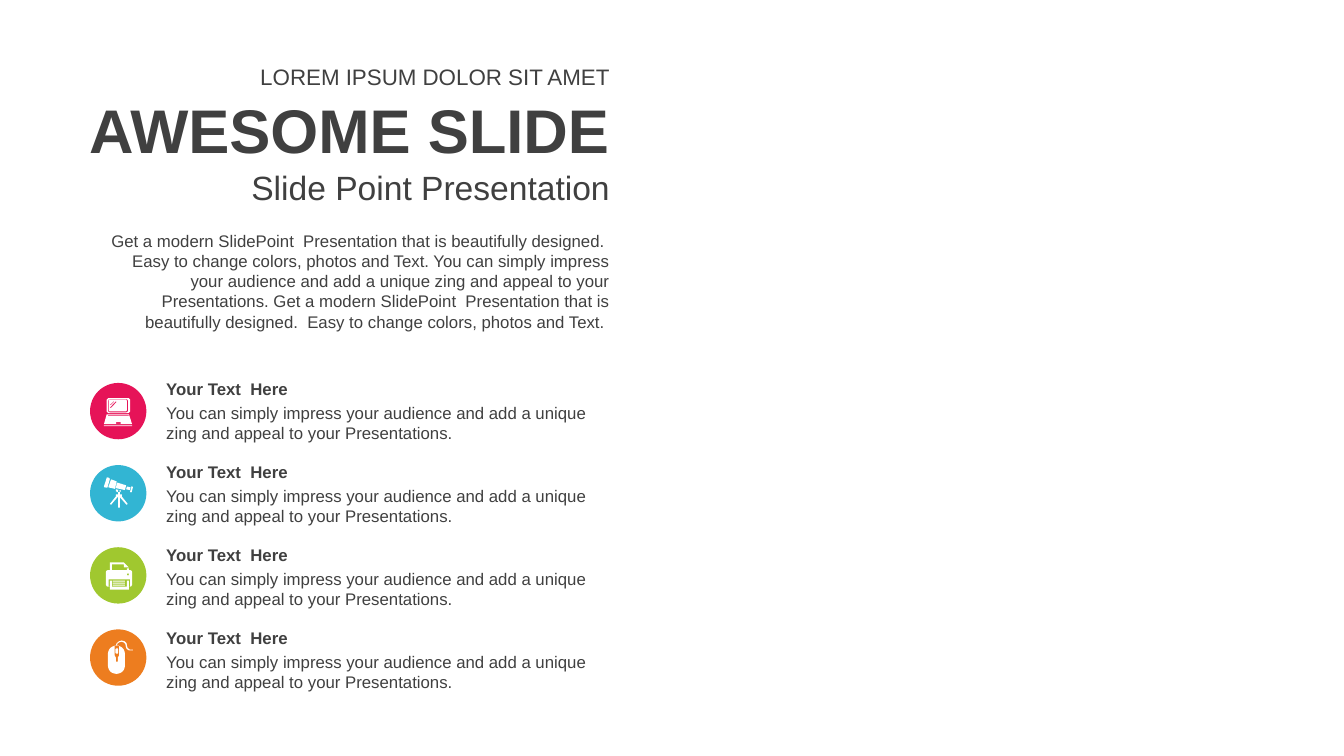
from math import cos, pi, sin

from pptx import Presentation
from pptx.dml.color import RGBColor
from pptx.enum.shapes import MSO_SHAPE
from pptx.enum.text import MSO_ANCHOR, MSO_AUTO_SIZE, PP_ALIGN
from pptx.util import Cm, Pt

DARK = RGBColor(0x40, 0x40, 0x40)
WHITE = RGBColor(0xFF, 0xFF, 0xFF)
PINK = RGBColor(0xE6, 0x13, 0x58)
BLUE = RGBColor(0x32, 0xB5, 0xD3)
GREEN = RGBColor(0xA0, 0xC8, 0x2F)
ORANGE = RGBColor(0xED, 0x7D, 0x1F)

INTRO = (
    "Get a modern SlidePoint  Presentation that is beautifully designed.  "
    "Easy to change colors, photos and Text. You can simply impress your audience "
    "and add a unique zing and appeal to your Presentations. "
    "Get a modern SlidePoint  Presentation that is beautifully designed.  "
    "Easy to change colors, photos and Text. "
)
HEADING = "Your Text  Here"
DETAIL = ("You can simply impress your audience and add a unique zing "
          "and appeal to your Presentations.")


def rect(x, y, w, h):
    return [(x, y), (x + w, y), (x + w, y + h), (x, y + h)]


def rounded(x, y, w, h, radius, steps=6):
    centers = [(x + w - radius, y + h - radius), (x + radius, y + h - radius),
               (x + radius, y + radius), (x + w - radius, y + radius)]
    return [(cx + radius * cos(a), cy + radius * sin(a))
            for corner, (cx, cy) in enumerate(centers)
            for a in (pi / 2 * (corner + i / steps) for i in range(steps + 1))]


LAPTOP = [
    rounded(42, 38, 59, 38, 6),
    rounded(45, 41, 51, 33, 5),
    rounded(47, 42, 46, 30, 4),
    [(65, 46), (67, 48), (52, 64), (50, 62)],
    [(60, 46), (61, 47), (52, 56), (50, 55)],
    [(42, 79), (98, 79), (106, 104), (35, 104)],
    rect(45, 81, 53, 2),
    rounded(65, 99, 13, 4, 2),
    rect(35, 107, 71, 2),
]
TELESCOPE = [
    [(65, 61), (78, 64), (77, 67), (75, 69), (75, 74), (80, 74), (80, 79),
     (95, 98), (92, 100), (75, 81), (75, 107), (71, 107), (71, 79),
     (53, 100), (50, 98), (65, 79), (65, 74), (71, 74), (71, 69), (65, 66)],
    rounded(70, 63, 5, 5, 2),
    [(105, 53), (107, 54), (108, 56), (105, 68), (103, 69), (101, 67), (104, 56)],
    [(93, 54), (102, 56), (100, 63), (91, 61)],
    [(68, 44), (91, 51), (88, 63), (65, 58)],
    [(53, 36), (67, 41), (63, 60), (46, 56)],
    [(43, 31), (48, 32), (50, 35), (44, 56), (42, 57), (36, 56), (35, 54), (42, 32)],
]
PRINTER = [
    rounded(40, 58, 66, 41, 5),
    rect(47, 81, 54, 18),
    rounded(93, 66, 5, 5, 2),
    [(50, 84), (55, 84), (55, 99), (93, 99), (93, 84), (98, 84), (98, 107), (50, 107)],
    *[rect(57, y, 31, 3) for y in (84, 89, 94)],
    [(50, 38), (85, 38), (85, 43), (55, 43), (55, 58), (50, 58)],
    [(85, 38), (98, 51), (85, 51)],
    rect(93, 53, 5, 5),
]
MOUSE = [
    rounded(45, 41, 43, 71, 20),
    [(62, 41), (62, 66), (65, 71), (65, 81), (70, 81), (70, 71), (73, 66), (73, 41)],
    rounded(64, 48, 7, 13, 3),
    [(65, 41), (67, 35), (73, 30), (80, 28), (87, 30), (92, 35), (93, 41),
     (95, 47), (100, 51), (108, 51), (108, 53), (98, 53), (92, 49), (90, 43),
     (89, 37), (85, 33), (79, 31), (73, 33), (69, 36), (68, 41)],
]
ITEMS = [(PINK, LAPTOP), (BLUE, TELESCOPE), (GREEN, PRINTER), (ORANGE, MOUSE)]


def add_text(shapes, text, x, y, w, h, size=12, bold=False,
             align=PP_ALIGN.LEFT, anchor=MSO_ANCHOR.TOP):
    tf = shapes.add_textbox(Cm(x), Cm(y), Cm(w), Cm(h)).text_frame
    tf.word_wrap = True
    tf.auto_size = MSO_AUTO_SIZE.SHAPE_TO_FIT_TEXT
    tf.vertical_anchor = anchor
    p = tf.paragraphs[0]
    p.text = text
    p.alignment = align
    p.font.name = "Arial"
    p.font.size = Pt(size)
    p.font.bold = bold
    p.font.color.rgb = DARK


def paint(shape, color):
    shape.shadow.inherit = False
    shape.fill.solid()
    shape.fill.fore_color.rgb = color
    shape.line.fill.background()


def add_icon(shapes, contours, x, y):
    builder = shapes.build_freeform(*contours[0][0], scale=Cm(0.01))
    for i, contour in enumerate(contours):
        if i:
            builder.move_to(*contour[0])
        builder.add_line_segments(contour[1:], close=True)
    paint(builder.convert_to_shape(Cm(x), Cm(y)), WHITE)


def add_badge(shapes, color, contours, x, y):
    paint(shapes.add_shape(MSO_SHAPE.OVAL, Cm(x), Cm(y), Cm(1.42), Cm(1.42)), color)
    add_icon(shapes, contours, x, y)


def add_caption(shapes, x, y):
    group = shapes.add_group_shape()
    add_text(group.shapes, DETAIL, x, y + 0.61, 11.28, 1.27)
    add_text(group.shapes, HEADING, x, y, 11.28, 0.76, bold=True)


def main():
    prs = Presentation()
    prs.slide_width, prs.slide_height = Cm(33.87), Cm(19.05)
    s = prs.slides.add_slide(prs.slide_layouts[6])
    right, middle = PP_ALIGN.RIGHT, MSO_ANCHOR.MIDDLE
    add_text(s.shapes, "LOREM IPSUM DOLOR SIT AMET", 1.7, 1.47, 13.92, 0.94, 16, align=right)
    add_text(s.shapes, "AWESOME SLIDE", 1.7, 2.18, 13.92, 2.13, 44, True, right, middle)
    add_text(s.shapes, "Slide Point Presentation", 1.7, 4.09, 13.92, 1.27, 24,
             align=right, anchor=middle)
    add_text(s.shapes, INTRO, 2.18, 5.69, 13.44, 2.82, align=right)
    for i, (color, contours) in enumerate(ITEMS):
        add_badge(s.shapes, color, contours, 2.27, 9.65 + 2.07 * i)
        add_caption(s.shapes, 3.94, 9.42 + 2.09 * i)
    prs.save("out.pptx")


if __name__ == "__main__":
    main()
